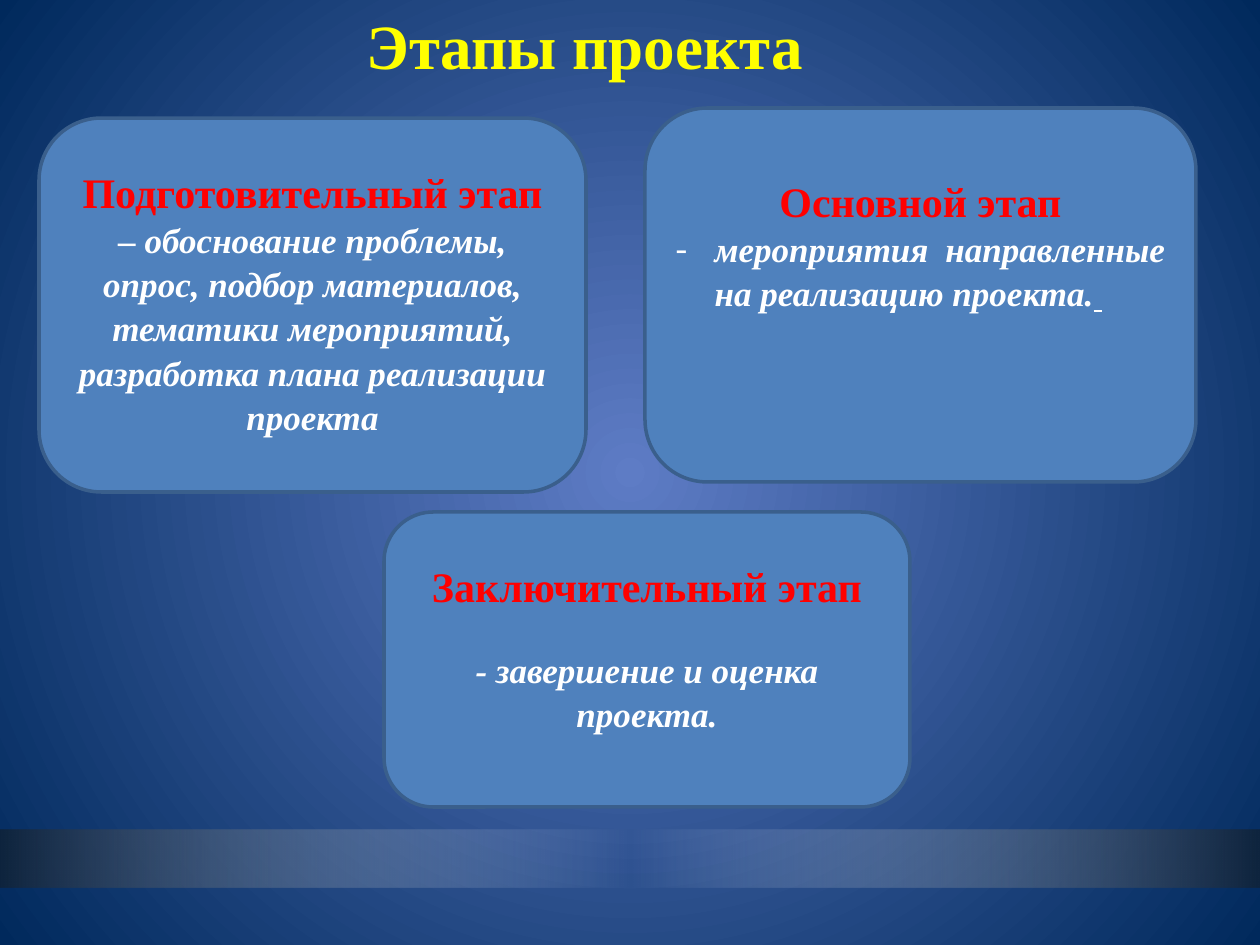
from pptx import Presentation
from pptx.dml.color import RGBColor
from pptx.enum.shapes import MSO_SHAPE
from pptx.enum.text import MSO_ANCHOR, MSO_AUTO_SIZE, PP_ALIGN
from pptx.oxml import parse_xml
from pptx.oxml.ns import nsdecls
from pptx.util import Pt

SCALE = 914400 // 126
FONT = "Times New Roman"
COLORS = {
    "glow": "5E7CC5", "navy": "00295C", "dark": "0F243E", "pale": "C2D1ED",
    "box": "4F81BD", "edge": "3A5F8C", "title": "FFFF00", "head": "FF0000",
    "body": "FFFFFF",
}


def px(n):
    return n * SCALE


def rgb(name):
    return RGBColor.from_string(COLORS[name])


def node(tag, attrs="", inner=""):
    return parse_xml(f"<a:{tag} {nsdecls('a')} {attrs}>{inner}</a:{tag}>")


def write(para, text, size=20, color="body", italic=False, line=False,
          align=PP_ALIGN.CENTER, before=0, lead=1.0):
    para.alignment = align
    para.space_before = px(before)
    para.line_spacing = lead
    run = para.add_run()
    run.text = text
    font = run.font
    font.name, font.size, font.bold = FONT, Pt(size), True
    font.italic, font.underline = italic, line
    font.color.rgb = rgb(color)
    return run


def blend(fill, root, stops, shade):
    fill.gradient()
    grad = root.xpath(".//a:gradFill")[0]
    for kid in list(grad):
        grad.remove(kid)
    marks = "".join(
        f'<a:gs pos="{pos * 1000}"><a:srgbClr val="{COLORS[name]}">'
        f'<a:alpha val="{alpha * 1000}"/></a:srgbClr></a:gs>'
        for pos, name, alpha in stops)
    grad.append(node("gsLst", inner=marks))
    grad.append(shade)


def add_back(slide):
    mid = '<a:fillToRect l="50000" t="50000" r="50000" b="50000"/>'
    blend(slide.background.fill, slide.element,
          [(0, "glow", 100), (100, "navy", 100)],
          node("path", 'path="circle"', mid))


def add_band(slide):
    band = slide.shapes.add_shape(
        MSO_SHAPE.RECTANGLE, 0, px(830), px(1260), px(58))
    band.shadow.inherit = False
    band.line.fill.background()
    blend(band.fill, band.element,
          [(0, "dark", 100), (50, "pale", 0), (100, "dark", 100)],
          node("lin", 'ang="0" scaled="0"'))


def add_title(slide, text):
    title = slide.shapes.title
    title.left, title.top = px(334), 0
    title.width, title.height = px(517), px(89)
    frame = title.text_frame
    frame.word_wrap = True
    frame.auto_size = MSO_AUTO_SIZE.SHAPE_TO_FIT_TEXT
    frame.vertical_anchor = MSO_ANCHOR.TOP
    run = write(frame.paragraphs[0], text, size=36, color="title")
    fill = f'<a:solidFill><a:srgbClr val="{COLORS["title"]}"/></a:solidFill>'
    run._r.get_or_add_rPr().insert(0, node("ln", 'w="11430"', fill))


def add_stage(slide, area, inset, head, body, gap=0, dash=False):
    box = slide.shapes.add_shape(
        MSO_SHAPE.FLOWCHART_ALTERNATE_PROCESS, *map(px, area))
    box.shadow.inherit = False
    box.fill.solid()
    box.fill.fore_color.rgb = rgb("box")
    box.line.color.rgb = rgb("edge")
    box.line.width = Pt(2)
    frame = box.text_frame
    frame.word_wrap = True
    frame.vertical_anchor = MSO_ANCHOR.TOP
    frame.margin_top = px(inset)
    write(frame.paragraphs[0], head, size=24, color="head")
    para = frame.add_paragraph()
    align = PP_ALIGN.JUSTIFY if dash else PP_ALIGN.CENTER
    form = dict(italic=True, align=align, before=gap, lead=1.05)
    write(para, body, **form)
    if dash:
        write(para, " ", line=True, **form)
        props = para._p.get_or_add_pPr()
        props.set("marL", str(px(39)))
        props.set("indent", str(px(-39)))
        props.append(node("buFont", f'typeface="{FONT}"'))
        props.append(node("buChar", 'char="-"'))


def main():
    deck = Presentation()
    deck.slide_width, deck.slide_height = px(1260), px(945)
    slide = deck.slides.add_slide(deck.slide_layouts[5])
    add_back(slide)
    add_band(slide)
    add_title(slide, "Этапы проекта ")
    add_stage(slide, (39, 118, 547, 374), 30, "Подготовительный этап",
              "– обоснование проблемы, опрос, подбор материалов, "
              "тематики мероприятий, разработка плана реализации проекта")
    add_stage(slide, (645, 108, 551, 374), 49, "Основной этап",
              "мероприятия направленные на реализацию проекта.", dash=True)
    add_stage(slide, (384, 512, 526, 295), 34, "Заключительный этап",
              "- завершение и оценка проекта.", gap=36)
    deck.save("out.pptx")


if __name__ == "__main__":
    main()
